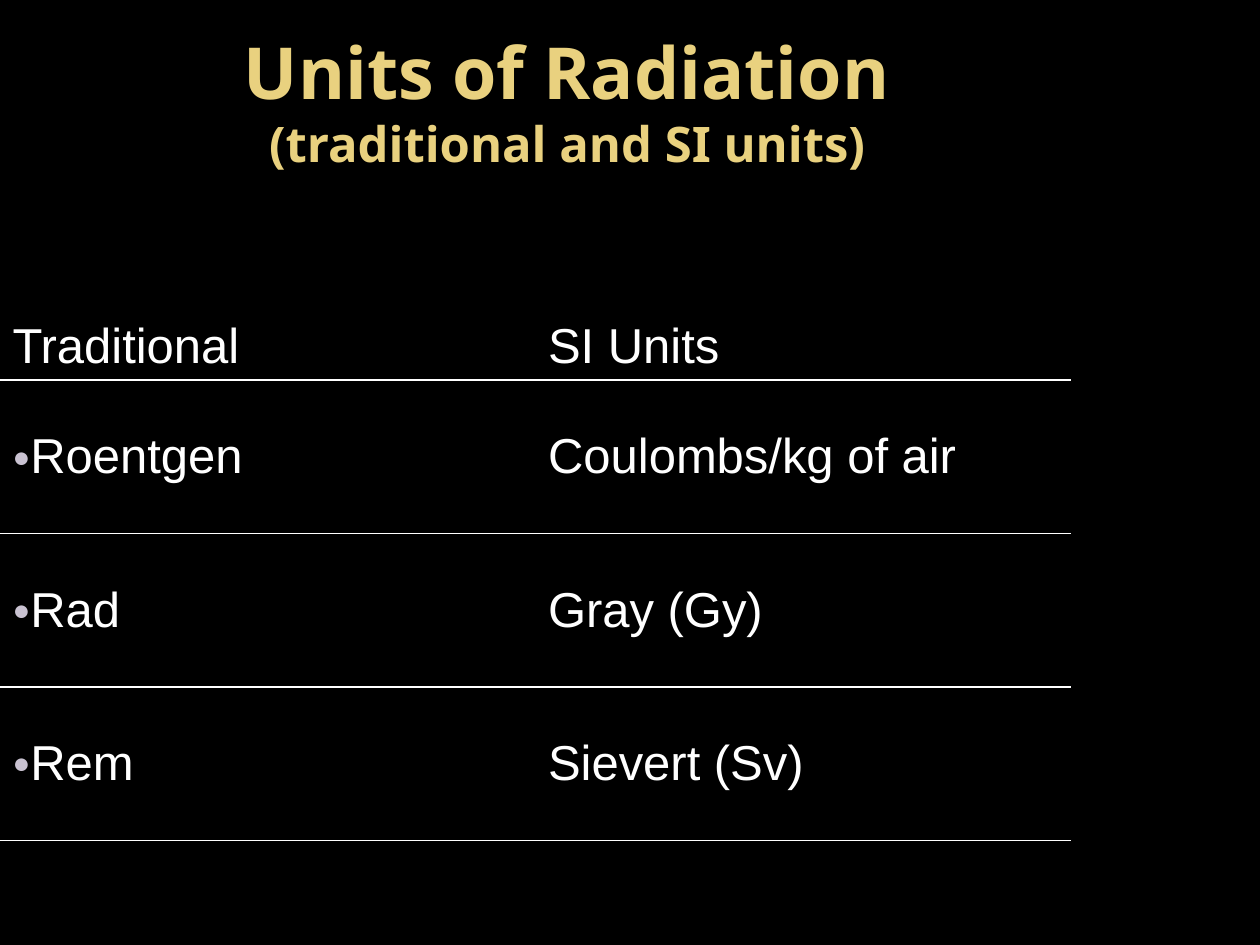
"""Build a slide comparing traditional and SI units of radiation."""
from dataclasses import dataclass

from lxml.etree import SubElement
from pptx import Presentation
from pptx.dml.color import RGBColor as RGB
from pptx.enum.text import MSO_ANCHOR as Anchor, PP_ALIGN as Align
from pptx.oxml.ns import qn
from pptx.util import Inches, Pt

PLAIN_TABLE = "{2D5ABB26-0587-4C30-8999-92F81FD0307C}"
UNITS = [
    ("Traditional", "SI Units"),
    ("Roentgen", "Coulombs/kg of air"),
    ("Rad", "Gray (Gy)"),
    ("Rem", "Sievert (Sv)"),
]


@dataclass(frozen=True)
class Theme:
    """Colours, fonts and type sizes of the slide."""
    background: str = "000000"
    heading: str = "E9D17F"
    body: str = "FFFFFF"
    bullet: str = "C9C2D1"
    heading_font: str = "Noto Sans"
    body_font: str = "Arial"
    heading_size: int = 41
    body_size: int = 28


def apply(target, values):
    """Set each named attribute on the target."""
    for name, value in values.items():
        setattr(target, name, value)


def add_xml(parent, tag, **attributes):
    """Append a DrawingML element and return it."""
    return SubElement(parent, qn(tag), attributes)


class UnitsSlide:
    """Holds the theme and the current slide."""

    def __init__(self, slide, theme):
        """Keep the slide and paint its background."""
        self.slide, self.theme = slide, theme
        fill = slide.background.fill
        fill.solid()
        fill.fore_color.rgb = RGB.from_string(theme.background)

    def style(self, font, face, size, colour, bold=False):
        """Apply a type style to a font."""
        apply(font, {"name": face, "size": Pt(size), "bold": bold})
        font.color.rgb = RGB.from_string(colour)

    def title(self, heading, subheading, left, top, width, height):
        """Add the two-line centred title."""
        theme = self.theme
        frame = self.slide.shapes.add_textbox(left, top, width, height).text_frame
        apply(frame, {"word_wrap": True, "vertical_anchor": Anchor.MIDDLE})
        paragraph = frame.paragraphs[0]
        paragraph.alignment = Align.CENTER
        apply(paragraph._p.get_or_add_pPr(), {"marL": Inches(0.53), "indent": 0})
        for text, size in ((heading, theme.heading_size), (subheading, theme.body_size)):
            if paragraph.runs:
                paragraph.add_line_break()
            run = paragraph.add_run()
            run.text = text
            self.style(run.font, theme.heading_font, size, theme.heading, True)

    def bullet(self, paragraph):
        """Give a paragraph a hanging round bullet."""
        properties = paragraph._p.get_or_add_pPr()
        apply(properties, {"marL": Inches(0.38), "indent": Inches(-0.38)})
        colour = add_xml(properties, "a:buClr")
        add_xml(colour, "a:srgbClr", val=self.theme.bullet)
        add_xml(properties, "a:buSzPct", val="60000")
        add_xml(properties, "a:buFont", typeface=self.theme.body_font)
        add_xml(properties, "a:buChar", char="●")

    def rule_below(self, cell):
        """Draw the line under a table cell."""
        properties = cell._tc.get_or_add_tcPr()
        border = add_xml(properties, "a:lnB", w=str(Pt(1)))
        fill = add_xml(border, "a:solidFill")
        add_xml(fill, "a:srgbClr", val=self.theme.body)
        properties.insert(0, border)

    def cell(self, cell, text, is_header, has_bullet):
        """Fill and format one table cell."""
        theme = self.theme
        cell.fill.background()
        cell.vertical_anchor = Anchor.BOTTOM if is_header else Anchor.MIDDLE
        paragraph = cell.text_frame.paragraphs[0]
        paragraph.space_before = Pt(0.2 * theme.body_size)
        run = paragraph.add_run()
        run.text = text
        self.style(run.font, theme.body_font, theme.body_size, theme.body)
        if has_bullet:
            self.bullet(paragraph)
        self.rule_below(cell)

    def table(self, rows, left, top, width, height):
        """Add the ruled table of units."""
        frame = self.slide.shapes.add_table(len(rows), len(rows[0]), left, top, width, height)
        table = frame.table
        apply(table, {"first_row": False, "horz_banding": False})
        table._tbl.tblPr.find(qn("a:tableStyleId")).text = PLAIN_TABLE
        for row, texts in enumerate(rows):
            for column, text in enumerate(texts):
                is_header = row == 0
                has_bullet = column == 0 and not is_header
                self.cell(table.cell(row, column), text, is_header, has_bullet)


def main():
    """Build and save the presentation."""
    presentation = Presentation()
    apply(presentation, {"slide_width": Inches(10), "slide_height": Inches(7.5)})
    blank = presentation.slide_layouts[6]
    units = UnitsSlide(presentation.slides.add_slide(blank), Theme())
    units.title("Units of Radiation", "(traditional and SI units)",
                Inches(0), Inches(0.17), Inches(9), Inches(1.25))
    units.table(UNITS, Inches(0), Inches(1.8), Inches(8.5), Inches(4.87))
    presentation.save("out.pptx")


if __name__ == "__main__":
    main()
